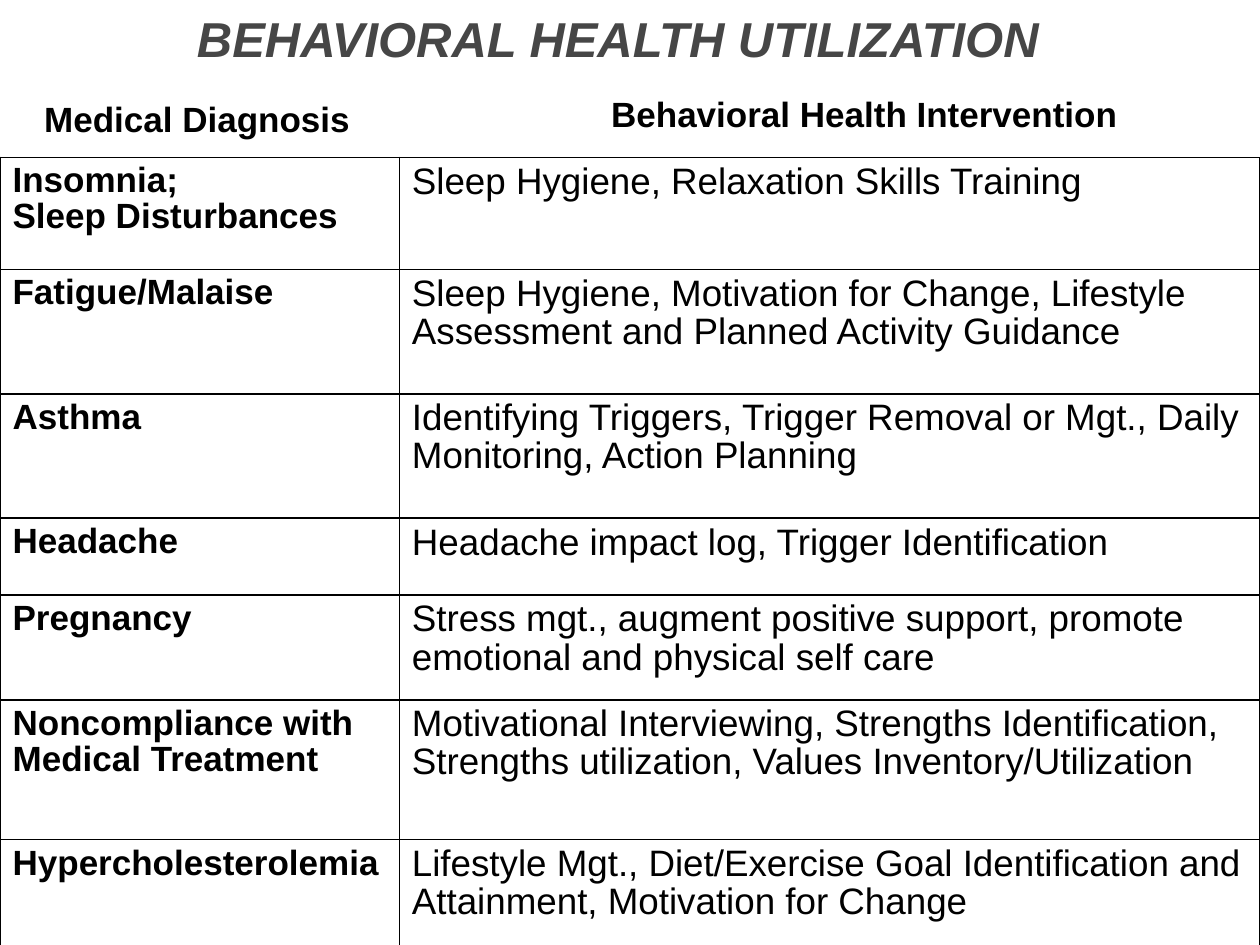
from lxml import etree
from pptx import Presentation
from pptx import util as u
from pptx.dml.color import RGBColor
from pptx.enum import text
from pptx.oxml.ns import qn

BLACK, GREY = "000000", "464646"
COL_WIDTHS = (8.05, 17.35)
# Row height in cm, diagnosis, intervention
ROWS = [
    (2.26, "Insomnia;\nSleep Disturbances",
     "Sleep Hygiene, Relaxation Skills Training"),
    (2.51, "Fatigue/Malaise",
     "Sleep Hygiene, Motivation for Change, Lifestyle Assessment and "
     "Planned Activity Guidance"),
    (2.51, "Asthma",
     "Identifying Triggers, Trigger Removal or Mgt., Daily Monitoring, "
     "Action Planning"),
    (1.55, "Headache", "Headache impact log, Trigger Identification"),
    (2.11, "Pregnancy",
     "Stress mgt., augment positive support, promote emotional and "
     "physical self care"),
    (2.82, "Noncompliance with Medical Treatment",
     "Motivational Interviewing, Strengths Identification, "
     "Strengths utilization, Values Inventory/Utilization"),
    (2.51, "Hypercholesterolemia",
     "Lifestyle Mgt., Diet/Exercise Goal Identification and Attainment, "
     "Motivation for Change"),
]


def rgb(hex_color):
    return RGBColor.from_string(hex_color)


def format_runs(tf, size, color=BLACK, bold=False, italic=False):
    for p in tf.paragraphs:
        for r in p.runs:
            r.font.name = "Arial"
            r.font.size = u.Pt(size)
            r.font.bold = bold
            r.font.italic = italic
            r.font.color.rgb = rgb(color)


def add_label(s, content, left, top, width, height):
    sp = s.shapes.add_textbox(*map(u.Cm, (left, top, width, height)))
    tf = sp.text_frame
    tf.word_wrap = True
    tf.text = content
    return tf


def add_borders(cell, color=BLACK, width=1):
    tc_pr = cell._tc.get_or_add_tcPr()
    for side in ("lnL", "lnR", "lnT", "lnB"):
        ln = etree.SubElement(tc_pr, qn(f"a:{side}"), w=str(u.Pt(width)))
        fill = etree.SubElement(ln, qn("a:solidFill"))
        etree.SubElement(fill, qn("a:srgbClr"), val=color)


def fill_cell(cell, content, size, bold):
    cell.text = content
    for p in cell.text_frame.paragraphs:
        p.line_spacing = 0.93
    format_runs(cell.text_frame, size, bold=bold)
    add_borders(cell)
    cell.fill.background()


def add_utilization_table(s):
    height = sum(row[0] for row in ROWS)
    frame = s.shapes.add_table(len(ROWS), len(COL_WIDTHS), u.Cm(0), u.Cm(3.17),
                               u.Cm(sum(COL_WIDTHS)), u.Cm(height))
    table = frame.table
    table.first_row = table.horz_banding = False
    for column, width in zip(table.columns, COL_WIDTHS):
        column.width = u.Cm(width)
    for i, (row_height, diagnosis, intervention) in enumerate(ROWS):
        table.rows[i].height = u.Cm(row_height)
        fill_cell(table.cell(i, 0), diagnosis, 20, True)
        fill_cell(table.cell(i, 1), intervention, 21, False)


def main():
    prs = Presentation()
    prs.slide_width, prs.slide_height = u.Cm(25.4), u.Cm(19.05)
    s = prs.slides.add_slide(prs.slide_layouts[6])

    # Diagnoses and interventions
    add_utilization_table(s)

    # Title, set slightly left of centre
    tf = add_label(s, "BEHAVIORAL HEALTH UTILIZATION", 0, 0, 25.4, 1.52)
    tf.margin_right = u.Cm(0.74)
    tf.vertical_anchor = text.MSO_ANCHOR.MIDDLE
    tf.paragraphs[0].alignment = text.PP_ALIGN.CENTER
    format_runs(tf, 28, GREY, bold=True, italic=True)

    # Column headings
    for heading, left, top, width in (
        ("Medical Diagnosis", 0.64, 1.85, 6.78),
        ("Behavioral Health Intervention", 12.07, 1.75, 12.5),
    ):
        tf = add_label(s, heading, left, top, width, 1.12)
        format_runs(tf, 20, bold=True)

    prs.save("out.pptx")


if __name__ == "__main__":
    main()
